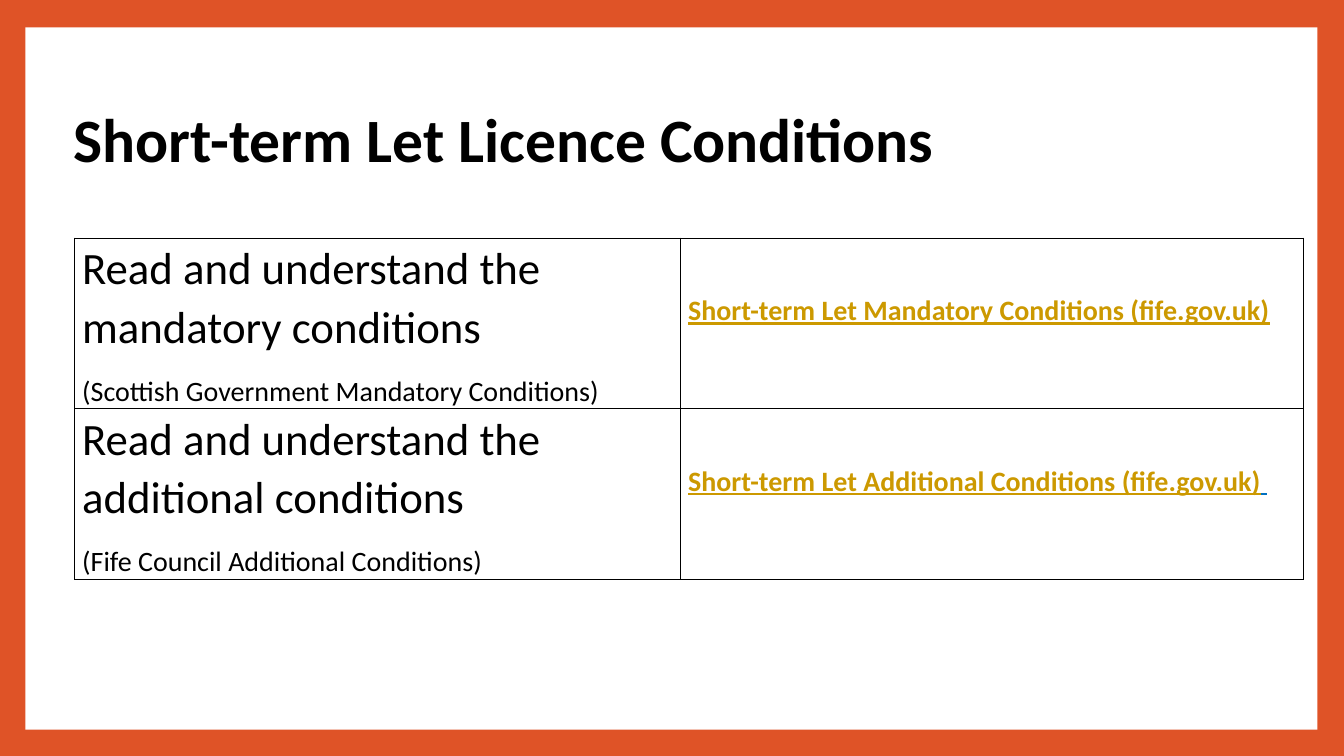
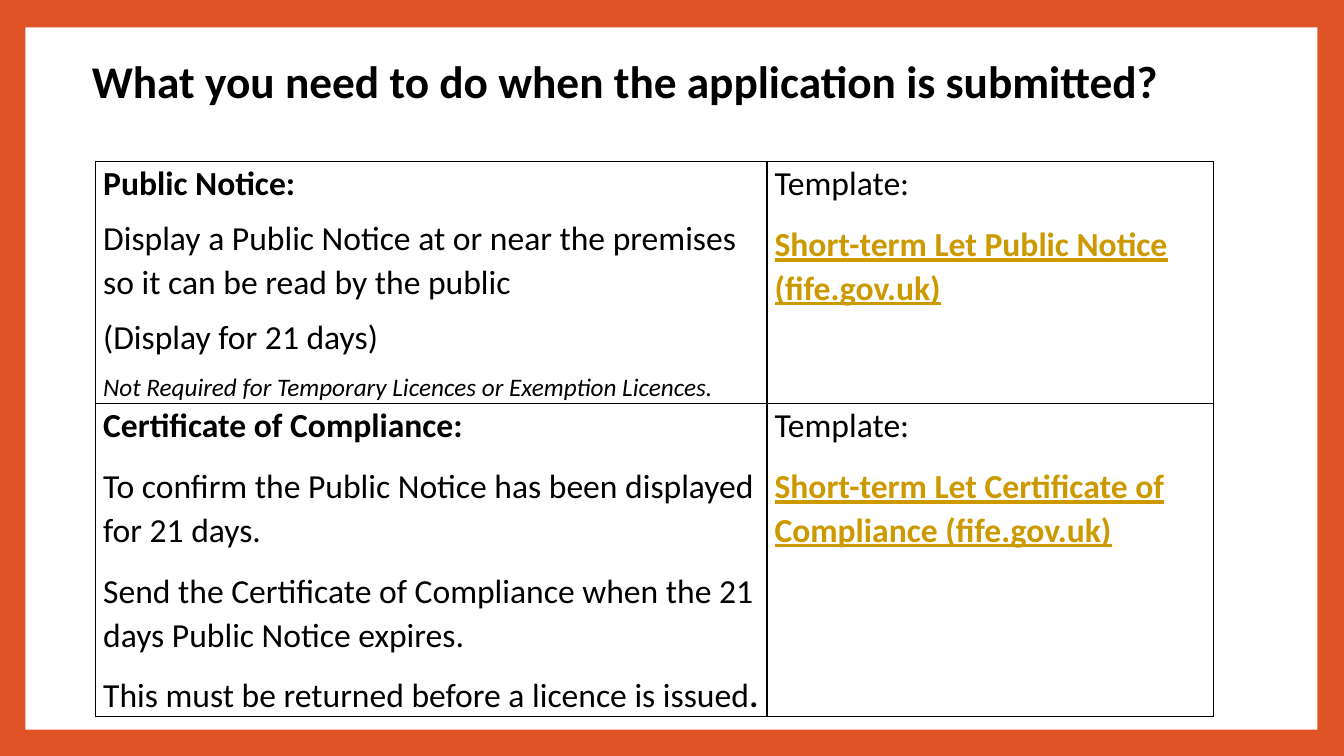
from dataclasses import dataclass
from typing import NamedTuple

from lxml.etree import SubElement
from pptx import Presentation
from pptx.dml.color import RGBColor
from pptx.enum.shapes import MSO_SHAPE as Shape
from pptx.enum.text import MSO_ANCHOR as Anchor, MSO_AUTO_SIZE as AutoSize, PP_ALIGN as Align
from pptx.oxml.ns import qn
from pptx.presentation import Presentation as Deck
from pptx.slide import Slide
from pptx.table import _Cell as TableCell
from pptx.text.text import _Paragraph as Paragraph
from pptx.util import Cm, Pt

FONT = "Calibri"
ORANGE, WHITE, BLACK, GOLD, BLUE = "DF5327", "FFFFFF", "000000", "CC9900", "0070C0"


class Run(NamedTuple):
    text: str
    size: float = 24
    color: str = BLACK
    bold: bool = False
    italic: bool = False
    underline: bool = False


@dataclass
class Cell:
    lines: list[list[Run]]
    before: float = 6
    after: float = 6
    top: float = 0


@dataclass
class Page:
    title: str
    title_size: float
    title_box: tuple[float, float, float, float]
    left: float
    top: float
    widths: list[float]
    heights: list[float]
    rows: list[list[Cell]]


def rgb(color: str) -> RGBColor:
    return RGBColor.from_string(color)


def link(text: str, size: float = 24) -> Run:
    return Run(text, size, GOLD, bold=True, underline=True)


def add_text(p: Paragraph, text: str, *, size: float = 24, color: str = BLACK,
             bold: bool = False, italic: bool = False, underline: bool = False) -> None:
    r = p.add_run()
    r.text = text
    font = r.font
    font.name, font.size = FONT, Pt(size)
    font.bold, font.italic, font.underline = bold, italic, underline
    font.color.rgb = rgb(color)


def style_master(prs: Deck, s: Slide) -> None:
    master = prs.slide_master
    fill = master.background.fill
    fill.solid()
    fill.fore_color.rgb = rgb(ORANGE)
    panel = s.shapes.add_shape(Shape.RECTANGLE, Cm(0.64), Cm(0.69), Cm(32.56), Cm(17.7))
    panel.shadow.inherit = False
    panel.fill.solid()
    panel.fill.fore_color.rgb = rgb(WHITE)
    panel.line.fill.background()
    master.shapes.element.insert(2, panel.element)


def set_title(s: Slide, page: Page) -> None:
    title = s.shapes.title
    title.left, title.top, title.width, title.height = map(Cm, page.title_box)
    tf = title.text_frame
    tf.auto_size, tf.vertical_anchor = AutoSize.NONE, Anchor.MIDDLE
    p = tf.paragraphs[0]
    p.alignment, p.line_spacing = Align.LEFT, 0.9
    add_text(p, page.title, size=page.title_size, bold=True)


def set_borders(cell: TableCell) -> None:
    props = cell._tc.get_or_add_tcPr()
    for side in ("L", "R", "T", "B"):
        line = SubElement(props, qn(f"a:ln{side}"), w=str(Pt(1)))
        SubElement(SubElement(line, qn("a:solidFill")), qn("a:srgbClr"), val=BLACK)


def fill_cell(cell: TableCell, content: Cell) -> None:
    set_borders(cell)
    cell.fill.background()
    cell.margin_left = cell.margin_right = Cm(0.19)
    cell.margin_top, cell.margin_bottom = Cm(content.top), Cm(0)
    tf = cell.text_frame
    for i, line in enumerate(content.lines):
        p = tf.add_paragraph() if i else tf.paragraphs[0]
        p.line_spacing = 1.07
        p.space_before, p.space_after = Pt(content.before), Pt(content.after)
        for run in line:
            add_text(p, **run._asdict())


def add_table(s: Slide, page: Page) -> None:
    table = s.shapes.add_table(
        len(page.heights), len(page.widths), Cm(page.left), Cm(page.top),
        Cm(sum(page.widths)), Cm(sum(page.heights))).table
    table.first_row = table.horz_banding = False
    for column, width in zip(table.columns, page.widths):
        column.width = Cm(width)
    for row, height, contents in zip(table.rows, page.heights, page.rows):
        row.height = Cm(height)
        for cell, content in zip(row.cells, contents):
            fill_cell(cell, content)


def condition_row(task: str, source: str, *target: Run) -> list[Cell]:
    return [Cell([[Run(task, 32)], [Run(source, 20)]]), Cell([list(target)], top=1.34)]


def template_cell(name: str) -> Cell:
    return Cell([[Run("Template:")], [link(name)]])


PAGES = [
    Page(
        "Short-term Let Licence Conditions", 44, (1.6, 1.7, 29, 3.76),
        1.88, 6, [15.27, 15.7], [4.3, 4.3],
        [
            condition_row("Read and understand the mandatory conditions",
                          "(Scottish Government Mandatory Conditions)",
                          link("Short-term Let Mandatory Conditions (fife.gov.uk)", 20)),
            condition_row("Read and understand the additional conditions",
                          "(Fife Council Additional Conditions)",
                          link("Short-term Let Additional Conditions (fife.gov.uk)", 20),
                          Run(" ", 20, BLUE, bold=True, underline=True)),
        ],
    ),
    Page(
        "What you need to do when the application is submitted?", 32.4, (2.06, 0.97, 28.2, 2.26),
        2.41, 4.06, [16.92, 11.25], [6.1, 7.9],
        [
            [
                Cell([
                    [Run("Public Notice:", bold=True)],
                    [Run("Display a Public Notice at or near the premises "
                         "so it can be read by the public")],
                    [Run("(Display for 21 days)")],
                    [Run("Not Required for Temporary Licences or Exemption Licences.",
                         18, italic=True)],
                ], before=0, after=8),
                template_cell("Short-term Let Public Notice (fife.gov.uk)"),
            ],
            [
                Cell([
                    [Run("Certificate of Compliance:", bold=True)],
                    [Run("To confirm the Public Notice has been displayed for 21 days.")],
                    [Run("Send the Certificate of Compliance when the 21 days "
                         "Public Notice expires.")],
                    [Run("This must be returned before a licence is issued"),
                     Run(".", bold=True)],
                ]),
                template_cell("Short-term Let Certificate of Compliance (fife.gov.uk)"),
            ],
        ],
    ),
]


def main() -> None:
    prs = Presentation()
    prs.slide_width, prs.slide_height = Cm(33.87), Cm(19.05)
    title_only = prs.slide_layouts[5]
    for i, page in enumerate(PAGES):
        s = prs.slides.add_slide(title_only)
        if i == 0:
            style_master(prs, s)
        set_title(s, page)
        add_table(s, page)
    prs.save("out.pptx")


if __name__ == "__main__":
    main()
